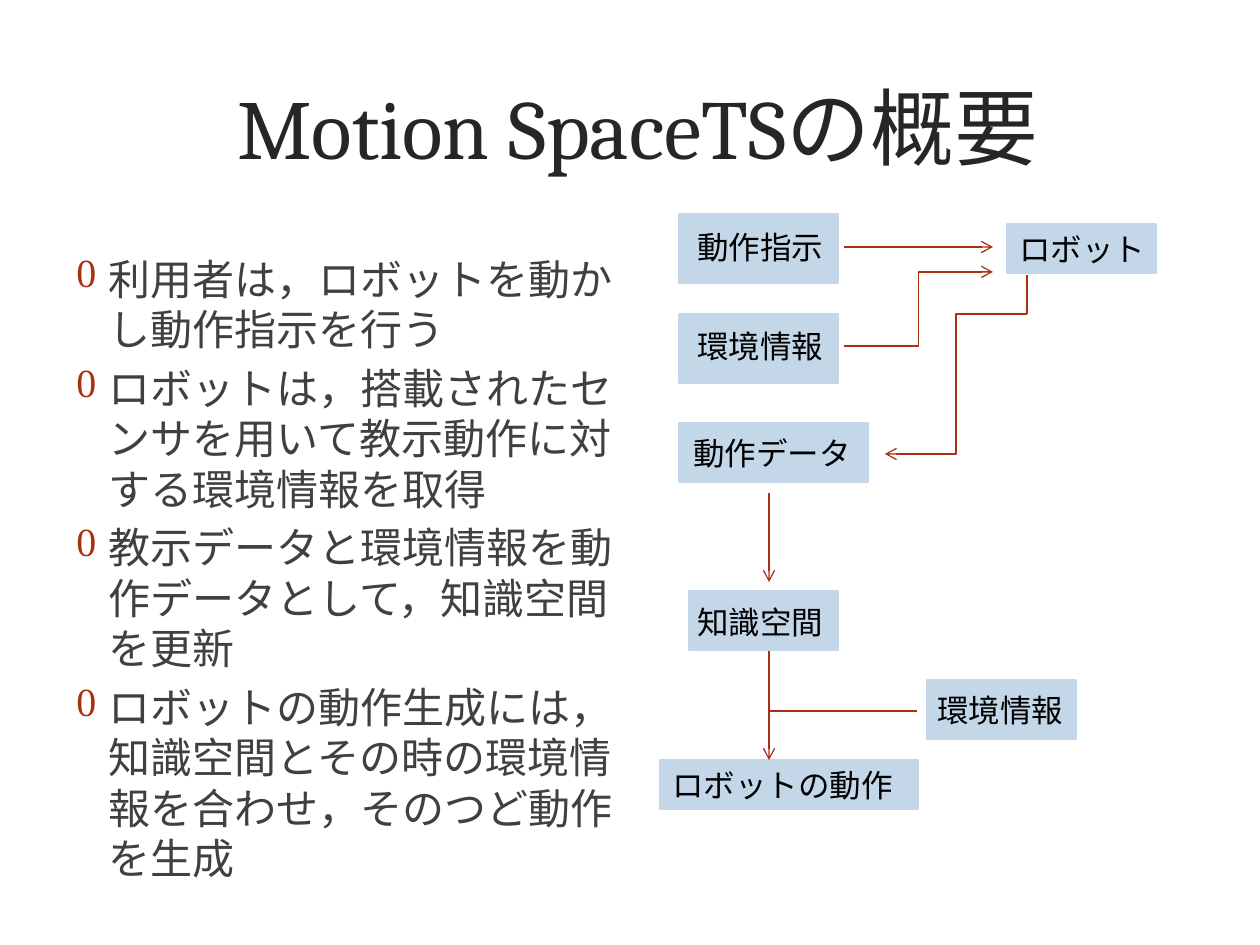
from dataclasses import dataclass

from lxml.etree import SubElement
from pptx import Presentation
from pptx.dml.color import RGBColor
from pptx.enum.shapes import MSO_CONNECTOR, MSO_SHAPE
from pptx.enum.text import MSO_ANCHOR, PP_ALIGN
from pptx.oxml.ns import qn
from pptx.util import Emu, Pt

EMU_PER_PX = 914400 / 126


@dataclass(frozen=True)
class Theme:
    font: str = "Cambria"
    title_color: str = "262626"
    body_color: str = "404040"
    label_color: str = "000000"
    node_color: str = "C4D7E9"
    accent: str = "A63212"
    title_size: int = 48
    body_size: int = 24
    label_size: int = 18
    node_border: float = 1.5
    arrow_width: float = 0.75


THEME = Theme()

TITLE = "Motion SpaceTSの概要"
POINTS = [
    "利用者は，ロボットを動かし動作指示を行う",
    "ロボットは，搭載されたセンサを用いて教示動作に対する環境情報を取得",
    "教示データと環境情報を動作データとして，知識空間を更新",
    "ロボットの動作生成には，知識空間とその時の環境情報を合わせ，そのつど動作を生成",
]

# Label, node box, and label's left, top and width
LABEL_HEIGHT = 50
NODES = [
    ("動作指示", (679, 214, 159, 69), (685, 222, 183)),
    ("環境情報", (679, 314, 159, 69), (685, 321, 159)),
    ("ロボット", (1007, 224, 149, 49), (1007, 224, 198)),
    ("動作データ", (679, 423, 189, 59), (681, 428, 189)),
    ("知識空間", (689, 591, 149, 59), (685, 597, 218)),
    ("環境情報", (927, 680, 149, 59), (925, 685, 188)),
    ("ロボットの動作", (660, 760, 258, 49), (660, 760, 258)),
]

# Route kind, start and end points, whether it ends in an arrowhead
STRAIGHT, ELBOW = MSO_CONNECTOR.STRAIGHT, MSO_CONNECTOR.ELBOW
FLOWS = [
    (STRAIGHT, (844, 247, 993, 247), True),
    (ELBOW, (844, 346, 993, 272), True),
    (STRAIGHT, (1027, 275, 1027, 314), False),
    (ELBOW, (1027, 314, 885, 454), True),
    (STRAIGHT, (769, 493, 769, 582), True),
    (STRAIGHT, (769, 651, 769, 760), True),
    (STRAIGHT, (917, 711, 769, 711), False),
]


def px(*lengths):
    return [Emu(round(length * EMU_PER_PX)) for length in lengths]


def rgb(color):
    return RGBColor.from_string(color)


def style(paragraph, size, color):
    formats = {"name": THEME.font, "size": Pt(size)}
    for attribute, value in formats.items():
        setattr(paragraph.font, attribute, value)
    paragraph.font.color.rgb = rgb(color)


def add_bullet(paragraph):
    hang = px(32)[0]
    properties = paragraph._p.get_or_add_pPr()
    properties.set("marL", str(hang))
    properties.set("indent", str(-hang))
    bullet_color = SubElement(properties, qn("a:buClr"))
    SubElement(bullet_color, qn("a:srgbClr"), val=THEME.accent)
    SubElement(properties, qn("a:buSzPct"), val="95000")
    SubElement(properties, qn("a:buChar"), char="0")


def add_text(slide, box, lines, size, color, bulleted=False,
             anchor=MSO_ANCHOR.TOP, align=PP_ALIGN.LEFT):
    frame = slide.shapes.add_textbox(*px(*box)).text_frame
    frame.word_wrap = True
    frame.vertical_anchor = anchor
    for index, line in enumerate(lines):
        paragraph = frame.add_paragraph() if index else frame.paragraphs[0]
        paragraph.text = line
        paragraph.alignment = align
        if bulleted:
            add_bullet(paragraph)
        if index:
            paragraph.space_before = Pt(size * 0.2)
        style(paragraph, size, color)


def add_node(slide, label, box, label_place):
    node = slide.shapes.add_shape(MSO_SHAPE.RECTANGLE, *px(*box))
    node.shadow.inherit = False
    node.fill.solid()
    node.fill.fore_color.rgb = rgb(THEME.node_color)
    node.line.color.rgb = rgb(THEME.node_color)
    node.line.width = Pt(THEME.node_border)
    add_text(slide, (*label_place, LABEL_HEIGHT), [label],
             THEME.label_size, THEME.label_color)


def add_flow(slide, route, ends, has_arrow):
    flow = slide.shapes.add_connector(route, *px(*ends))
    flow.line.color.rgb = rgb(THEME.accent)
    flow.line.width = Pt(THEME.arrow_width)
    if has_arrow:
        SubElement(flow.line._get_or_add_ln(), qn("a:tailEnd"), type="arrow")
    SubElement(flow._element.spPr, qn("a:effectLst"))


def main():
    presentation = Presentation()
    presentation.slide_width, presentation.slide_height = px(1260, 945)
    slide = presentation.slides.add_slide(presentation.slide_layouts[6])

    # Title and explanation
    add_text(slide, (84, 26, 1108, 199), [TITLE], THEME.title_size,
             THEME.title_color, anchor=MSO_ANCHOR.MIDDLE,
             align=PP_ALIGN.CENTER)
    add_text(slide, (64, 247, 595, 601), POINTS, THEME.body_size,
             THEME.body_color, bulleted=True)

    # Flow diagram
    for label, box, label_place in NODES:
        add_node(slide, label, box, label_place)
    for route, ends, has_arrow in FLOWS:
        add_flow(slide, route, ends, has_arrow)

    presentation.save("out.pptx")


if __name__ == "__main__":
    main()
